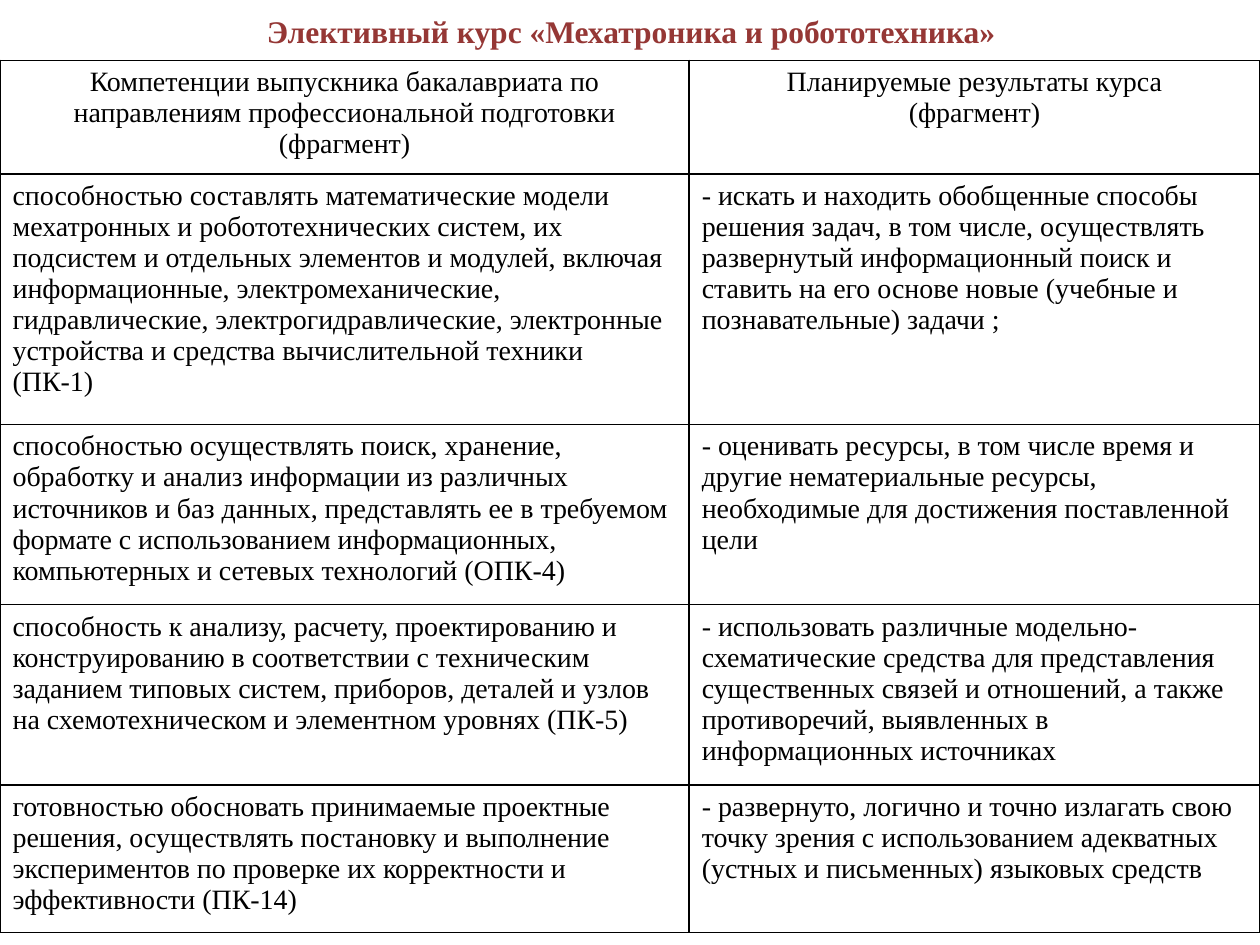
"""Build a slide with a table of graduate competences and planned course results."""
from lxml import etree
from pptx import Presentation
from pptx.dml.color import RGBColor
from pptx.enum.text import PP_ALIGN
from pptx.oxml.ns import qn
from pptx.util import Inches, Pt

CENTER, LEFT = PP_ALIGN.CENTER, PP_ALIGN.LEFT
FONT = "Times New Roman"
COLORS = {"title": "953735", "text": "000000", "border": "000000", "cell": "FFFFFF"}
COLUMN_WIDTHS = [5.47, 4.53]
ROW_HEIGHTS = [0.9, 1.99, 1.43, 1.43, 1.17]
ROWS = [
    (
        ["Компетенции выпускника бакалавриата по направлениям профессиональной подготовки (фрагмент)"],
        ["Планируемые результаты курса", "(фрагмент)"],
    ),
    (
        [
            "способностью составлять математические модели мехатронных и робототехнических систем, их",
            "подсистем и отдельных элементов и модулей, включая информационные, электромеханические,",
            "гидравлические, электрогидравлические, электронные устройства и средства вычислительной техники",
            "(ПК-1)",
        ],
        ["- искать и находить обобщенные способы решения задач, в том числе, осуществлять развернутый "
         "информационный поиск и ставить на его основе новые (учебные и познавательные) задачи ;"],
    ),
    (
        ["способностью осуществлять поиск, хранение, обработку и анализ информации из различных источников "
         "и баз данных, представлять ее в требуемом формате с использованием информационных, "
         "компьютерных и сетевых технологий (ОПК-4)"],
        ["- оценивать ресурсы, в том числе время и другие нематериальные ресурсы, необходимые для "
         "достижения поставленной цели"],
    ),
    (
        ["способность к анализу, расчету, проектированию и конструированию в соответствии с техническим "
         "заданием типовых систем, приборов, деталей и узлов на схемотехническом и элементном уровнях (ПК-5)"],
        ["- использовать различные модельно-схематические средства для представления существенных связей "
         "и отношений, а также противоречий, выявленных в информационных источниках"],
    ),
    (
        ["готовностью обосновать принимаемые проектные решения, осуществлять постановку и выполнение "
         "экспериментов по проверке их корректности и эффективности (ПК-14)"],
        ["- развернуто, логично и точно излагать свою точку зрения с использованием адекватных "
         "(устных и письменных) языковых средств"],
    ),
]


def write_paragraphs(frame, lines, size, color, align, bold=False):
    frame.text = "\n".join(lines)
    for para in frame.paragraphs:
        para.alignment = align
        para.font.name = FONT
        para.font.size = Pt(size)
        para.font.bold = bold
        para.font.color.rgb = RGBColor.from_string(COLORS[color])


def add_borders(cell):
    properties = cell._tc.get_or_add_tcPr()
    for side in ("a:lnL", "a:lnR", "a:lnT", "a:lnB"):
        line = etree.SubElement(properties, qn(side), w=str(Pt(1)))
        fill = etree.SubElement(line, qn("a:solidFill"))
        etree.SubElement(fill, qn("a:srgbClr"), val=COLORS["border"])


deck = Presentation()
deck.slide_width, deck.slide_height = Inches(10), Inches(7.5)
page = deck.slides.add_slide(deck.slide_layouts[6])

table = page.shapes.add_table(
    len(ROWS), len(COLUMN_WIDTHS), Inches(0), Inches(0.48), Inches(10), Inches(sum(ROW_HEIGHTS))
).table
table.horz_banding = False
table.first_row = False
for column, width in zip(table.columns, COLUMN_WIDTHS):
    column.width = Inches(width)
for row, height in zip(table.rows, ROW_HEIGHTS):
    row.height = Inches(height)

for row_index, row_texts in enumerate(ROWS):
    for column_index, lines in enumerate(row_texts):
        cell = table.cell(row_index, column_index)
        add_borders(cell)
        cell.fill.solid()
        cell.fill.fore_color.rgb = RGBColor.from_string(COLORS["cell"])
        write_paragraphs(cell.text_frame, lines, 16, "text", LEFT if row_index else CENTER)

title_box = page.shapes.add_textbox(Inches(1.33), Inches(0.05), Inches(7.36), Inches(0.4))
title_box.text_frame.word_wrap = True
write_paragraphs(
    title_box.text_frame, ["Элективный курс «Мехатроника и робототехника»"], 18, "title", CENTER, bold=True
)

deck.save("out.pptx")
